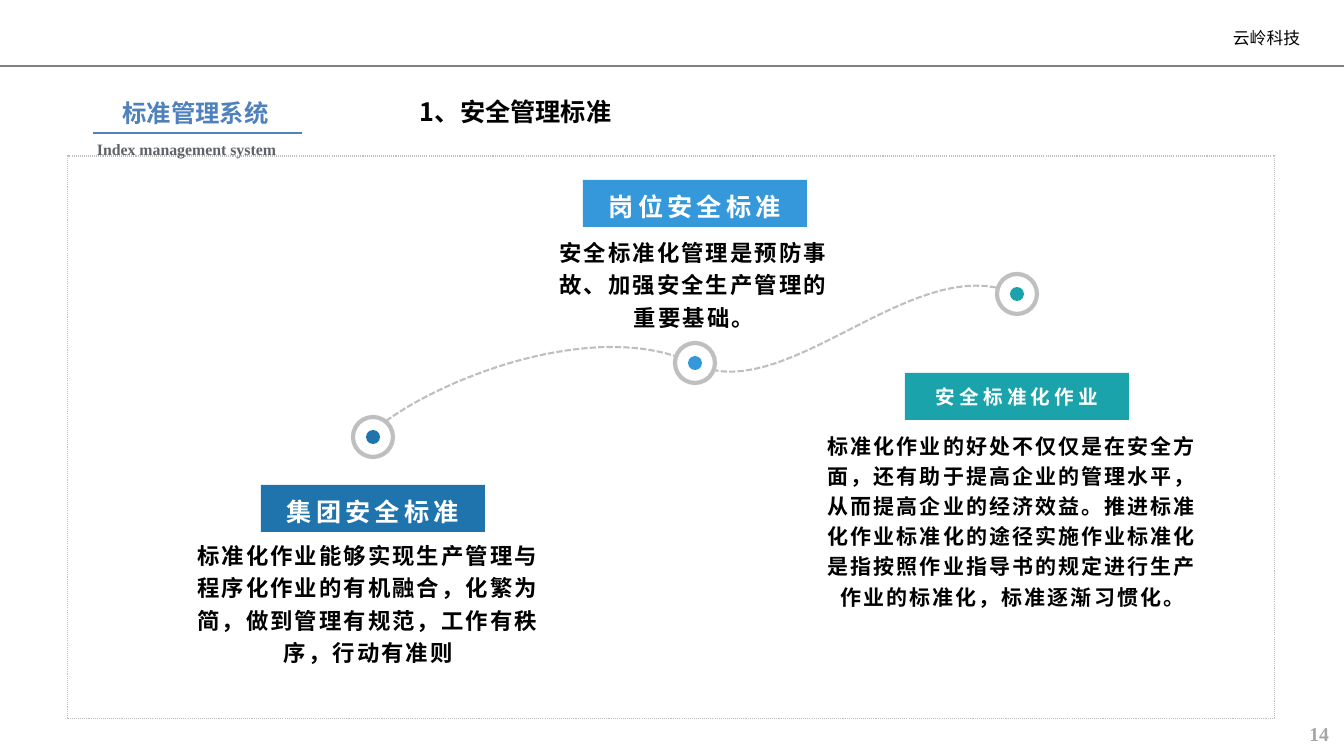
from dataclasses import dataclass

from lxml.etree import SubElement
from pptx import Presentation
from pptx.dml.color import RGBColor
from pptx.enum.dml import MSO_LINE
from pptx.enum.shapes import MSO_CONNECTOR, MSO_SHAPE
from pptx.enum.text import MSO_ANCHOR, MSO_AUTO_SIZE, PP_ALIGN
from pptx.oxml.ns import qn
from pptx.util import Emu, Pt

PX = 914400 / 100.8


@dataclass(frozen=True)
class Theme:
    black: str = "000000"
    white: str = "FFFFFF"
    heading: str = "4F81BD"
    subtitle: str = "5F6266"
    rule: str = "808080"
    trail: str = "BFBFBF"
    number: str = "A6A6A6"
    navy: str = "1F74AD"
    blue: str = "3498DB"
    teal: str = "1AA3AA"
    sans: str = "Arial"
    serif: str = "Times New Roman"
    heading_font: str = "Calibri"
    chinese: str = "Noto Sans CJK SC"
    title_size: float = 18
    heading_size: float = 17.4
    subtitle_size: float = 11.3
    body_size: float = 16
    small_body_size: float = 15
    label_size: float = 18
    small_label_size: float = 14
    number_size: float = 14
    header_size: float = 12


def px(*lengths):
    return [Emu(round(length * PX)) for length in lengths]


def rgb(code):
    return RGBColor.from_string(code)


def curve_points(controls, steps=30):
    """Points along joined cubic curves; each later curve adds three controls."""
    points = [controls[0]]
    for first in range(0, len(controls) - 1, 3):
        corners = controls[first:first + 4]
        for step in range(1, steps + 1):
            t = step / steps
            weights = ((1 - t) ** 3, 3 * t * (1 - t) ** 2, 3 * t * t * (1 - t), t ** 3)
            points.append(tuple(sum(w * corner[axis] for w, corner in zip(weights, corners))
                                for axis in (0, 1)))
    return points


class Page:
    def __init__(self, deck, theme):
        self.theme = theme
        self.slide = deck.slides.add_slide(deck.slide_layouts[5])
        self.shapes = self.slide.shapes

    def fill_text(self, shape, text, size, color, font=None, bold=True, align=PP_ALIGN.LEFT,
                  anchor=MSO_ANCHOR.TOP, insets=(10, 5, 10, 5), spacing=1.0, tracking=0):
        frame = shape.text_frame
        left, top, right, bottom = px(*insets)
        frame_format = {"word_wrap": True, "auto_size": MSO_AUTO_SIZE.NONE,
                        "vertical_anchor": anchor, "margin_left": left, "margin_top": top,
                        "margin_right": right, "margin_bottom": bottom}
        for name, value in frame_format.items():
            setattr(frame, name, value)
        para = frame.paragraphs[0]
        para.alignment, para.line_spacing = align, spacing
        span = para.add_run()
        span.text = text
        span.font.color.rgb = rgb(color)
        font_format = {"size": Pt(size), "bold": bold, "name": font or self.theme.sans}
        for name, value in font_format.items():
            setattr(span.font, name, value)
        properties = span._r.get_or_add_rPr()
        if tracking:
            properties.set("spc", str(round(tracking * 100)))
        east_asian = SubElement(properties, qn("a:ea"))
        east_asian.set("typeface", self.theme.chinese)
        properties.find(qn("a:latin")).addnext(east_asian)

    def text(self, bounds, text, size, color, **style):
        self.fill_text(self.shapes.add_textbox(*px(*bounds)), text, size, color, **style)

    def title(self, bounds, text):
        shape = self.shapes.title
        for name, value in zip(("left", "top", "width", "height"), px(*bounds)):
            setattr(shape, name, value)
        self.fill_text(shape, text, self.theme.title_size, self.theme.black,
                       font=self.theme.chinese)

    def paint(self, shape, fill=None, line=None, width=1, dash=None):
        shape.shadow.inherit = False
        if fill:
            shape.fill.solid()
            shape.fill.fore_color.rgb = rgb(fill)
        else:
            shape.fill.background()
        if line:
            shape.line.color.rgb = rgb(line)
            shape.line.width = Pt(width)
            if dash:
                shape.line.dash_style = dash
        else:
            shape.line.fill.background()

    def shape(self, kind, bounds, **paint):
        shape = self.shapes.add_shape(kind, *px(*bounds))
        self.paint(shape, **paint)
        return shape

    def circle(self, center, size, **paint):
        x, y = center
        self.shape(MSO_SHAPE.OVAL, (x - size // 2, y - size // 2, size, size), **paint)

    def rule(self, left, right, y, color, width):
        line = self.shapes.add_connector(MSO_CONNECTOR.STRAIGHT, *px(left, y, right, y))
        line.line.color.rgb = rgb(color)
        line.line.width = Pt(width)
        SubElement(line._element.spPr, qn("a:effectLst"))

    def trail(self, controls):
        start, *rest = [px(*point) for point in curve_points(controls)]
        builder = self.shapes.build_freeform(*start)
        builder.add_line_segments(rest, close=False)
        self.paint(builder.convert_to_shape(), line=self.theme.trail, width=1.5,
                   dash=MSO_LINE.SQUARE_DOT)

    def milestone(self, center, color, label_top, label, label_size, body_bounds, body, body_size):
        theme = self.theme
        self.circle(center, 40, fill=theme.white, line=theme.trail, width=3)
        self.circle(center, 14, fill=color)
        box = self.shape(MSO_SHAPE.RECTANGLE, (center[0] - 112, label_top, 224, 47), fill=color)
        self.fill_text(box, label, label_size, theme.white, align=PP_ALIGN.CENTER,
                       anchor=MSO_ANCHOR.MIDDLE, tracking=3,
                       spacing=1.2 if label_size == theme.label_size else 1.0)
        self.text(body_bounds, body, body_size, theme.black, align=PP_ALIGN.CENTER,
                  spacing=1.2, tracking=1.5)


def main():
    deck = Presentation()
    deck.slide_width, deck.slide_height = px(1344, 756)
    theme = Theme()
    page = Page(deck, theme)

    page.shape(MSO_SHAPE.RECTANGLE, (68, 156, 1207, 563), line=theme.trail, width=0.75,
               dash=MSO_LINE.ROUND_DOT)
    page.rule(0, 1344, 66, theme.rule, 1.25)
    page.text((1223, 26, 85, 23), "云岭科技", theme.header_size, theme.black, bold=False,
              anchor=MSO_ANCHOR.MIDDLE, insets=(10, 1, 2, 1))
    page.text((1223, 717, 116, 34), "14", theme.number_size, theme.number,
              font=theme.serif, align=PP_ALIGN.RIGHT)
    page.text((21, 93, 349, 39), "标准管理系统", theme.heading_size, theme.heading,
              font=theme.heading_font, align=PP_ALIGN.CENTER)
    page.rule(93, 302, 133, theme.heading, 1.5)
    page.text((87, 135, 222, 29), "Index management system", theme.subtitle_size,
              theme.subtitle, font=theme.serif)
    page.title((410, 91, 555, 40), "1、安全管理标准")

    page.trail([(386, 421), (454, 372), (603, 319), (695, 364),
                (786, 408), (916, 248), (1016, 294)])
    milestones = [
        ((373, 437), theme.navy, 485, "集团安全标准", theme.label_size, (186, 532, 365, 145),
         "标准化作业能够实现生产管理与程序化作业的有机融合，化繁为简，做到管理有规范，工作有秩序，行动有准则",
         theme.body_size),
        ((695, 363), theme.blue, 180, "岗位安全标准", theme.label_size, (544, 229, 300, 108),
         "安全标准化管理是预防事故、加强安全生产管理的重要基础。", theme.body_size),
        ((1017, 294), theme.teal, 373, "安全标准化作业", theme.small_label_size,
         (814, 423, 397, 221),
         "标准化作业的好处不仅仅是在安全方面，还有助于提高企业的管理水平，从而提高企业的经济效益。"
         "推进标准化作业标准化的途径实施作业标准化是指按照作业指导书的规定进行生产作业的标准化，标准逐渐习惯化。",
         theme.small_body_size),
    ]
    for milestone in milestones:
        page.milestone(*milestone)
    deck.save("out.pptx")


if __name__ == "__main__":
    main()
